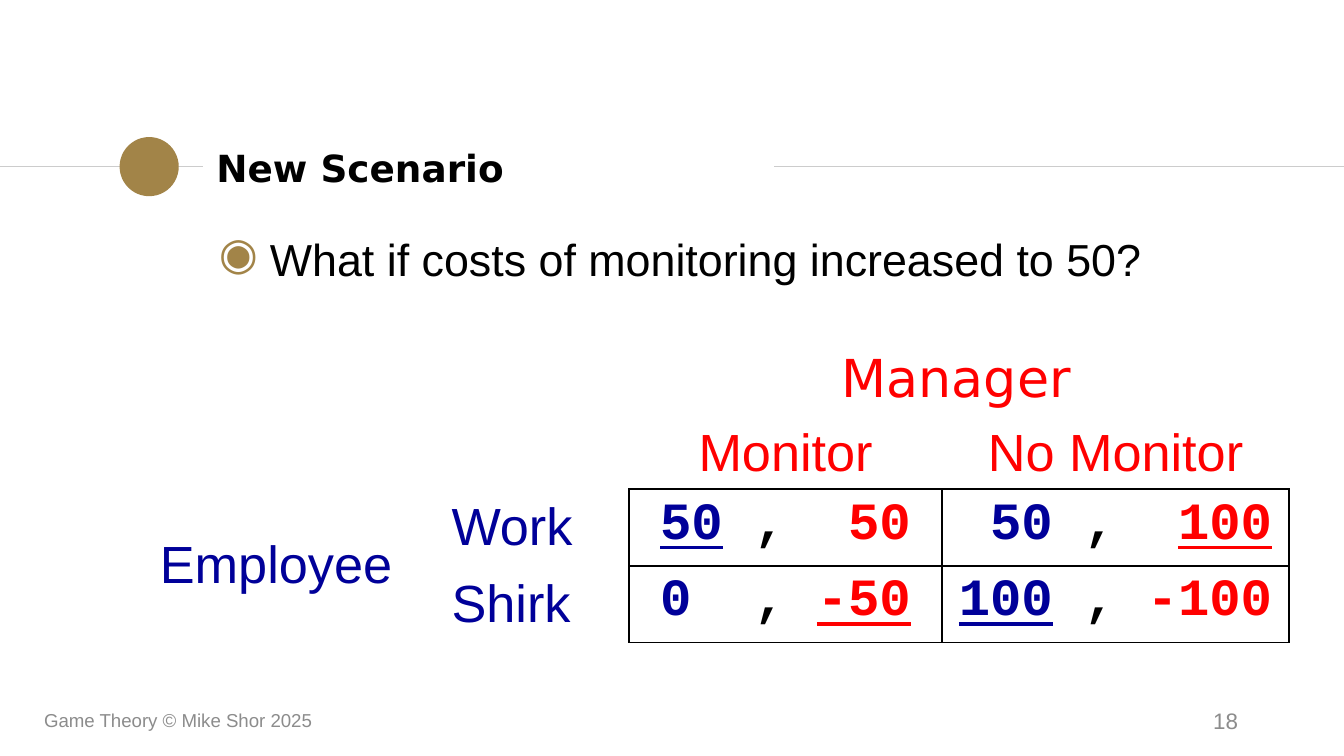
import dataclasses

import lxml.etree
import pptx
import pptx.dml.color
import pptx.enum.shapes
import pptx.enum.text
import pptx.oxml.ns
import pptx.util

Inches = pptx.util.Inches
Pt = pptx.util.Pt
qn = pptx.oxml.ns.qn
ALIGN = pptx.enum.text.PP_ALIGN
ANCHOR = pptx.enum.text.MSO_ANCHOR

COLORS = {
    "black": "000000",
    "rule": "CCCCCC",
    "gold": "A28448",
    "footer": "8C8C8C",
    "manager": "FF0000",
    "employee": "000099",
}
SLIDE_WIDTH = Inches(10)
SLIDE_HEIGHT = SLIDE_WIDTH * 9 // 16
RULE_Y = 1.24


@dataclasses.dataclass(frozen=True)
class Span:
    text: str
    color: str = "black"
    size: float = 28
    font: str = "Arial"
    bold: bool = False
    underline: bool = False


@dataclasses.dataclass(frozen=True)
class Label:
    """A text box holding one paragraph."""
    left: float
    top: float
    width: float
    height: float
    span: Span
    align: ALIGN = ALIGN.LEFT
    anchor: ANCHOR = ANCHOR.MIDDLE


@dataclasses.dataclass(frozen=True)
class Payoff:
    """Payoffs of one outcome; the underlined ones are best responses."""
    employee: str
    comma: str
    manager: str
    employee_best: bool = False
    manager_best: bool = False

    def spans(self) -> list[Span]:
        code = {"font": "Courier New", "bold": True}
        return [
            Span(self.employee, "employee", underline=self.employee_best, **code),
            Span(self.comma, **code),
            Span(self.manager, "manager", underline=self.manager_best, **code),
        ]


LABELS = [
    Label(0.23, 5.21, 3.38, 0.3, Span("Game Theory © Mike Shor 2025", "footer", 10)),
    Label(7.06, 5.21, 2.25, 0.3, Span("18", "footer", 12), ALIGN.RIGHT),
]
MANAGER = Label(5.75, 2.52, 2.73, 0.57, Span("Manager", "manager", 28, "DejaVu Sans"),
                ALIGN.CENTER, ANCHOR.TOP)
QUESTION = Label(1.53, 1.67, 7.45, 3.4,
                 Span("What if costs of monitoring increased to 50?", size=24),
                 anchor=ANCHOR.TOP)

COLUMN_WIDTHS = [2.17, 1.42, 2.33, 2.58]
ROW_HEIGHT = 0.57
MANAGER_MOVES = ["Monitor", "No Monitor"]
PAYOFFS = {
    "Work": [Payoff("50", " ,  ", "50", employee_best=True),
             Payoff(" 50", " ,  ", "100", manager_best=True)],
    "Shirk": [Payoff("0", "  , ", "-50", manager_best=True),
              Payoff("100", " , ", "-100", employee_best=True)],
}


def rgb(name: str) -> pptx.dml.color.RGBColor:
    return pptx.dml.color.RGBColor.from_string(COLORS[name])


def write(para, spans: list[Span], align: ALIGN = ALIGN.LEFT) -> None:
    para.alignment = align
    for span in spans:
        run = para.add_run()
        run.text = span.text
        formats = {"name": span.font, "size": Pt(span.size),
                   "bold": span.bold, "underline": span.underline}
        for name, value in formats.items():
            setattr(run.font, name, value)
        run.font.color.rgb = rgb(span.color)


def set_percent_before(para, percent: int) -> None:
    """Space before the paragraph as a share of its line height."""
    before = lxml.etree.Element(qn("a:spcBef"))
    lxml.etree.SubElement(before, qn("a:spcPct"), val=str(percent * 1000))
    para._p.get_or_add_pPr().insert(0, before)


def set_margins(frame, margin: float) -> None:
    for side in ("left", "right", "top", "bottom"):
        setattr(frame, f"margin_{side}", Inches(margin))


def add_label(page, label: Label):
    box = page.shapes.add_textbox(*map(Inches, (label.left, label.top, label.width, label.height)))
    frame = box.text_frame
    frame.word_wrap = True
    frame.vertical_anchor = label.anchor
    write(frame.paragraphs[0], [label.span], label.align)
    return box


def add_rule(page, start: float, end: float) -> None:
    line = page.shapes.add_connector(
        pptx.enum.shapes.MSO_CONNECTOR.STRAIGHT,
        Inches(start), Inches(RULE_Y), Inches(end), Inches(RULE_Y))
    line.line.color.rgb = rgb("rule")
    line.line.width = Pt(0.75)
    lxml.etree.SubElement(line._element.spPr, qn("a:effectLst"))


def add_title(page) -> None:
    add_rule(page, 0, 1.51)
    dot = page.shapes.add_shape(pptx.enum.shapes.MSO_SHAPE.OVAL, Inches(0.89),
                                Inches(RULE_Y - 0.22), Inches(0.44), Inches(0.44))
    dot.shadow.inherit = False
    dot.fill.solid()
    dot.fill.fore_color.rgb = rgb("gold")
    dot.line.fill.background()
    add_rule(page, 5.76, 10)

    title = page.shapes.title
    place = {"left": 1.51, "top": 1.01, "width": 4.24, "height": 0.48}
    for name, value in place.items():
        setattr(title, name, Inches(value))
    frame = title.text_frame
    frame.vertical_anchor = ANCHOR.MIDDLE
    set_margins(frame, 0.1)
    write(frame.paragraphs[0], [Span("New Scenario", size=20, font="DejaVu Sans", bold=True)])


def add_question(page) -> None:
    frame = add_label(page, QUESTION).text_frame
    set_margins(frame, 0.1)
    para = frame.paragraphs[0]
    para.line_spacing = 0.9
    para.space_before = Pt(6)
    properties = para._p.get_or_add_pPr()
    properties.set("marL", str(Inches(0.38)))
    properties.set("indent", str(-Inches(0.38)))
    color = lxml.etree.SubElement(properties, qn("a:buClr"))
    lxml.etree.SubElement(color, qn("a:srgbClr"), val=COLORS["gold"])
    lxml.etree.SubElement(properties, qn("a:buChar"), char="◉")


def set_borders(cell, drawn: str) -> None:
    """Draw the sides named in drawn (letters of LRTB) and hide the others."""
    cell.fill.background()
    for index, side in enumerate("LRTB"):
        line = lxml.etree.Element(qn(f"a:ln{side}"), w=str(Pt(1)))
        if side in drawn:
            fill = lxml.etree.SubElement(line, qn("a:solidFill"))
            lxml.etree.SubElement(fill, qn("a:srgbClr"), val=COLORS["black"])
        else:
            lxml.etree.SubElement(line, qn("a:noFill"))
        cell._tc.get_or_add_tcPr().insert(index, line)


def fill_cell(cell, spans: list[Span], align: ALIGN, anchor: ANCHOR) -> None:
    cell.vertical_anchor = anchor
    para = cell.text_frame.paragraphs[0]
    write(para, spans, align)
    set_percent_before(para, 20)


def add_game(page) -> None:
    table = page.shapes.add_table(3, 4, Inches(1.09), Inches(3.07), Inches(sum(COLUMN_WIDTHS)),
                                  Inches(3 * ROW_HEIGHT)).table
    table.first_row = table.horz_banding = False
    for column, width in zip(table.columns, COLUMN_WIDTHS):
        column.width = Inches(width)
    for r, row in enumerate(table.rows):
        row.height = Inches(ROW_HEIGHT)
        for c, cell in enumerate(row.cells):
            inner = {(True, True): "LRTB", (True, False): "R" if c == 1 else "",
                     (False, True): "B", (False, False): ""}
            set_borders(cell, inner[r > 0, c > 1])

    table.cell(1, 0).merge(table.cell(2, 0))
    fill_cell(table.cell(1, 0), [Span("Employee", "employee")], ALIGN.LEFT, ANCHOR.MIDDLE)
    for c, move in enumerate(MANAGER_MOVES, 2):
        fill_cell(table.cell(0, c), [Span(move, "manager")], ALIGN.CENTER, ANCHOR.BOTTOM)
    for r, (move, payoffs) in enumerate(PAYOFFS.items(), 1):
        fill_cell(table.cell(r, 1), [Span(move, "employee")], ALIGN.LEFT, ANCHOR.MIDDLE)
        for c, payoff in enumerate(payoffs, 2):
            fill_cell(table.cell(r, c), payoff.spans(), ALIGN.CENTER, ANCHOR.TOP)


def main() -> None:
    deck = pptx.Presentation()
    deck.slide_width, deck.slide_height = SLIDE_WIDTH, SLIDE_HEIGHT
    page = deck.slides.add_slide(deck.slide_layouts[5])
    add_title(page)
    manager = add_label(page, MANAGER)
    set_percent_before(manager.text_frame.paragraphs[0], 50)
    add_game(page)
    add_question(page)
    for label in LABELS:
        add_label(page, label)
    deck.save("out.pptx")


if __name__ == "__main__":
    main()
